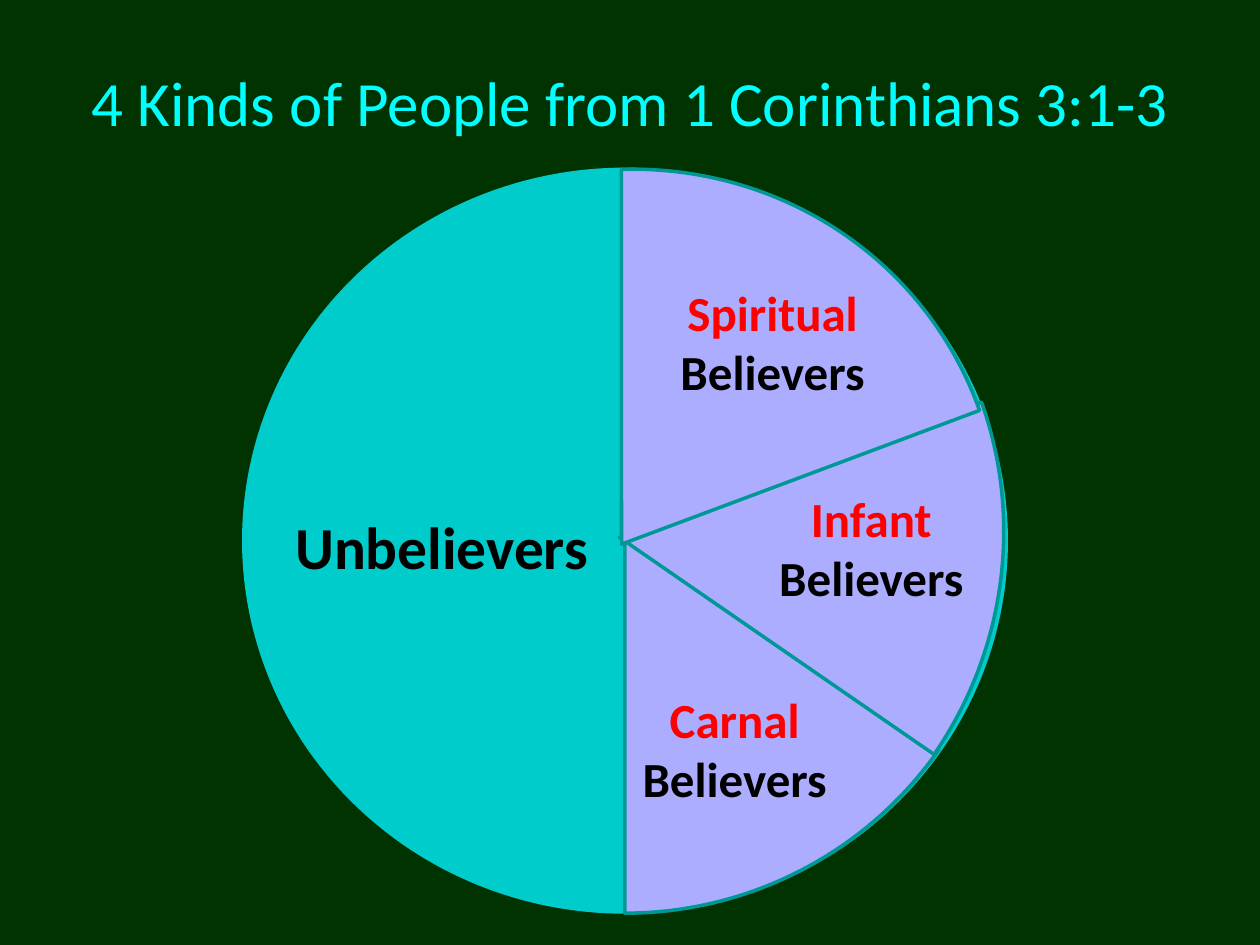
from pptx import Presentation
from pptx.dml.color import RGBColor
from pptx.enum.shapes import MSO_SHAPE
from pptx.enum.text import MSO_ANCHOR, PP_ALIGN
from pptx.util import Cm, Pt

DARK_GREEN = RGBColor(0x00, 0x33, 0x00)
TURQUOISE = RGBColor(0x00, 0xCC, 0xCC)
LAVENDER = RGBColor(0xAD, 0xAD, 0xFF)
TEAL = RGBColor(0x00, 0x97, 0x97)
CYAN = RGBColor(0x00, 0xFF, 0xFF)
RED = RGBColor(0xFF, 0x00, 0x00)
BLACK = RGBColor(0x00, 0x00, 0x00)

FONT = "Calibri"
DEGREE = 0.6  # pie adjustments count 60000ths of a degree, scaled by 100000


def add_filled(slide, preset, box, color):
    part = slide.shapes.add_shape(preset, *map(Cm, box))
    part.shadow.inherit = False
    part.fill.solid()
    part.fill.fore_color.rgb = color
    part.line.fill.background()
    return part


def add_slice(slide, box, end_angle=90, rotation=0):
    """Add an outlined pie slice that starts at 34.96 degrees."""
    pie_slice = add_filled(slide, MSO_SHAPE.PIE, box, LAVENDER)
    pie_slice.adjustments[0] = 34.96 * DEGREE
    pie_slice.adjustments[1] = end_angle * DEGREE
    pie_slice.rotation = rotation
    pie_slice.line.color.rgb = TEAL
    pie_slice.line.width = Pt(2)


def add_text(slide, box, paragraphs, size=28, bold=True, anchor=MSO_ANCHOR.TOP):
    """Add centred text; each paragraph is a list of (text, color) runs."""
    frame = slide.shapes.add_textbox(*map(Cm, box)).text_frame
    frame.word_wrap = True
    frame.vertical_anchor = anchor
    for index, runs in enumerate(paragraphs):
        paragraph = frame.add_paragraph() if index else frame.paragraphs[0]
        paragraph.alignment = PP_ALIGN.CENTER
        for text, color in runs:
            run = paragraph.add_run()
            run.text = text
            run.font.name = FONT
            run.font.size = Pt(size)
            run.font.bold = bold
            run.font.color.rgb = color


def main():
    prs = Presentation()
    prs.slide_width, prs.slide_height = Cm(25.4), Cm(19.05)
    slide = prs.slides.add_slide(prs.slide_layouts[6])
    slide.background.fill.solid()
    slide.background.fill.fore_color.rgb = DARK_GREEN

    add_filled(slide, MSO_SHAPE.FLOWCHART_OR, (4.88, 3.38, 15.44, 15.04), TURQUOISE)
    add_slice(slide, (4.88, 2.97, 15.44, 15.44))
    add_slice(slide, (4.65, 3.12, 15.67, 15.42), rotation=304.6)
    add_slice(slide, (5.05, 3.25, 14.96, 15.44), end_angle=104.51, rotation=235)

    add_text(slide, (1.27, 0.84, 22.86, 2.39),
             [[("4 Kinds of People from 1 Corinthians 3:1-3", CYAN)]],
             size=36, bold=False, anchor=MSO_ANCHOR.MIDDLE)
    add_text(slide, (4.88, 10.16, 8.05, 1.7), [[("Unbelievers", BLACK)]], size=34)
    for kind, box in (("Infant", (15.24, 9.73, 4.65, 2.36)),
                      ("Carnal", (12.27, 13.77, 5.08, 2.34))):
        add_text(slide, box, [[(kind, RED)], [("Believers", BLACK)]])
    add_text(slide, (12.5, 5.72, 6.15, 2.31),
             [[("Spiritual ", RED), ("Believers", BLACK)]],
             anchor=MSO_ANCHOR.MIDDLE)

    prs.save("out.pptx")


if __name__ == "__main__":
    main()
